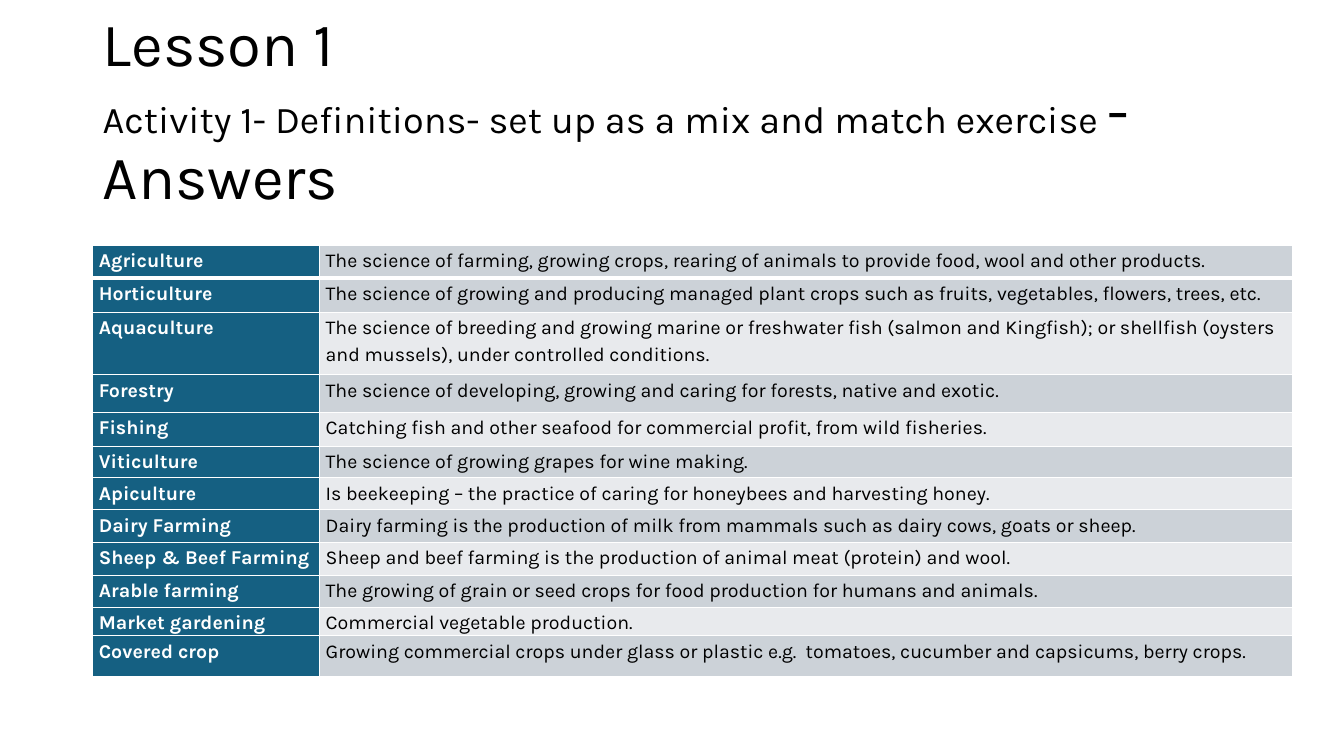
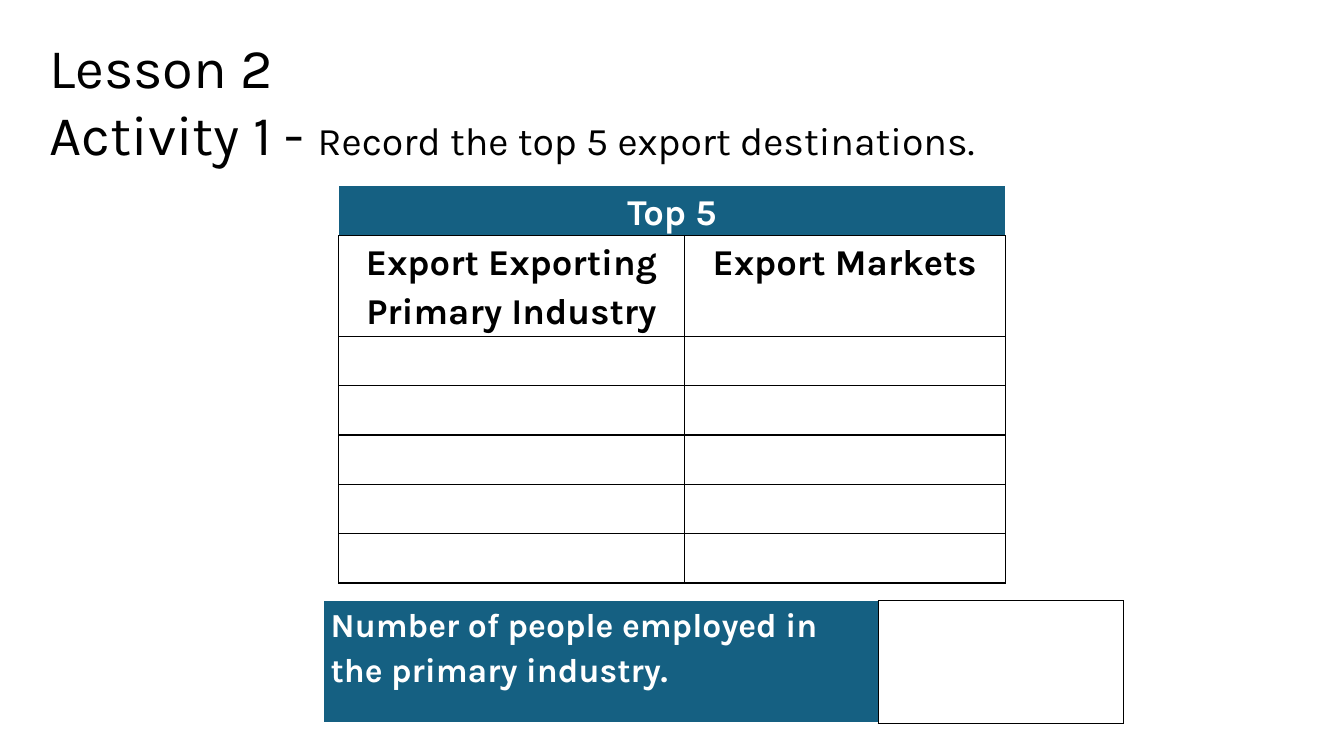
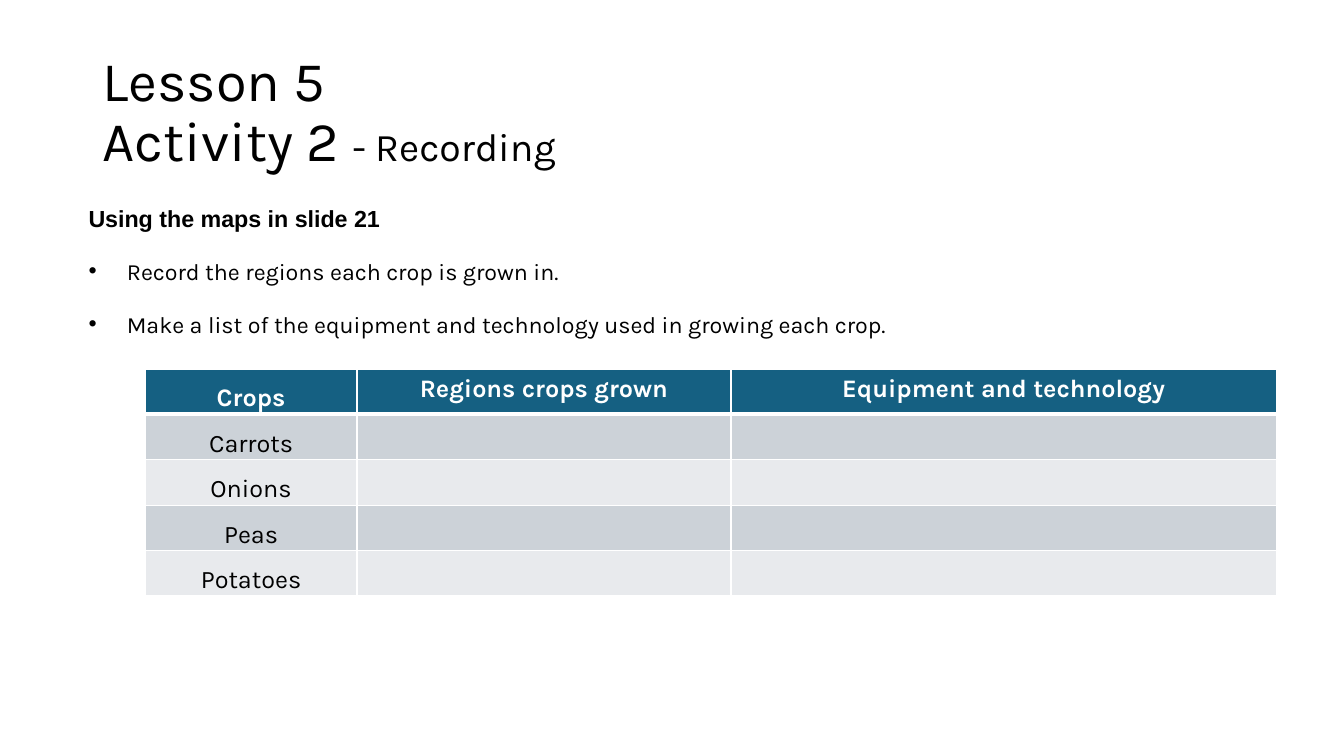
from dataclasses import dataclass, field
from typing import Optional

from lxml.etree import SubElement
from pptx import Presentation
from pptx.dml.color import RGBColor
from pptx.enum.text import MSO_ANCHOR as Anchor, PP_ALIGN as Align
from pptx.oxml.ns import qn
from pptx.util import Emu, Pt

PX = 9144  # 100 px to the inch
WIDE, HIGH = 1333, 750
FONT = "Karla"
HEX = {
    "black": "000000",
    "white": "FFFFFF",
    "teal": "156082",
    "dark": "CCD2D8",
    "light": "E8EAED",
}
TITLE = (92, 40, 1150, 145)

TERMS = [
    ("Agriculture", "The science of farming, growing crops, rearing of animals to provide food, wool and other products.", 33),
    ("Horticulture", "The science of growing and producing managed plant crops such as fruits, vegetables, flowers, trees, etc.", 34),
    ("Aquaculture", "The science of breeding and growing marine or freshwater fish (salmon and Kingfish); or shellfish (oysters and mussels), under controlled conditions.", 62),
    ("Forestry", "The science of developing, growing and caring for forests, native and exotic.", 37),
    ("Fishing", "Catching fish and other seafood for commercial profit, from wild fisheries.", 34),
    ("Viticulture", "The science of growing grapes for wine making.", 31),
    ("Apiculture", "Is beekeeping – the practice of caring for honeybees and harvesting honey.", 32),
    ("Dairy Farming", "Dairy farming is the production of milk from mammals such as dairy cows, goats or sheep.", 32),
    ("Sheep & Beef Farming", "Sheep and beef farming is the production of animal meat (protein) and wool.", 33),
    ("Arable farming", "The growing of grain or seed crops for food production for humans and animals.", 32),
    ("Market gardening", "Commercial vegetable production.", 27),
    ("Covered crop", "Growing commercial crops under glass or plastic e.g.  tomatoes, cucumber and capsicums, berry crops.", 41),
]
CROPS = ["Carrots", "Onions", "Peas", "Potatoes"]


@dataclass
class Cell:
    """One table cell; edges maps a side (L, R, T, B) to (colour, points)."""
    text: str = ""
    fill: str = "white"
    color: str = "black"
    bold: bool = False
    align: Align = Align.LEFT
    ls: float = 1.15
    sa: int = 8
    pad: Optional[tuple[int, int]] = None
    edges: dict[str, tuple[str, int]] = field(default_factory=dict)


def px(num: int) -> Emu:
    return Emu(num * PX)


def rgb(name: str) -> RGBColor:
    return RGBColor.from_string(HEX[name])


def write(frame, *runs: tuple[str, float], color: str = "black", font: str = FONT,
          bold: bool = False, align: Align = Align.LEFT, ls: float = 1.0,
          sb: int = 0, sa: int = 0, dent: int = 0) -> None:
    """Add a paragraph of (text, size) runs; a dent makes it a bullet."""
    para = frame.paragraphs[0]
    if para.runs:
        para = frame.add_paragraph()
    para.alignment, para.line_spacing = align, ls
    para.space_before, para.space_after = Pt(sb), Pt(sa)
    if dent:
        props = para._p.get_or_add_pPr()
        props.set("marL", str(px(dent)))
        props.set("indent", str(px(-dent)))
        SubElement(props, qn("a:buFont")).set("typeface", "Arial")
        SubElement(props, qn("a:buChar")).set("char", "•")
    for text, size in runs:
        for num, line in enumerate(text.split("\n")):
            if num:
                para.add_line_break()
            run = para.add_run()
            run.text = line
            run.font.name, run.font.size, run.font.bold = font, Pt(size), bold
            run.font.color.rgb = rgb(color)


def add_box(slide, area: tuple[int, int, int, int], anchor: Anchor = Anchor.TOP):
    frame = slide.shapes.add_textbox(*map(px, area)).text_frame
    frame.word_wrap = True
    frame.vertical_anchor = anchor
    return frame


def add_title(slide, *runs: tuple[str, float]) -> None:
    write(add_box(slide, TITLE, Anchor.MIDDLE), *runs, ls=0.9)


def set_edges(cell, edges: dict[str, tuple[str, int]]) -> None:
    props = cell._tc.get_or_add_tcPr()
    for spot, side in enumerate("LRTB"):
        color, width = edges[side]
        line = SubElement(props, qn(f"a:ln{side}"), w=str(Pt(width)))
        fill = SubElement(line, qn("a:solidFill"))
        SubElement(fill, qn("a:srgbClr"), val=HEX[color])
        props.insert(spot, line)


def add_grid(slide, left: int, top: int, cols: list[int], rows: list[int],
             cells: list[list[Cell]], size: int, line: str = "white"):
    shape = slide.shapes.add_table(len(rows), len(cols), px(left), px(top),
                                   px(sum(cols)), px(sum(rows)))
    table = shape.table
    table.first_row = table.horz_banding = False
    for col, wide in zip(table.columns, cols):
        col.width = px(wide)
    for row, high in zip(table.rows, rows):
        row.height = px(high)
    for r, row in enumerate(cells):
        for c, item in enumerate(row):
            cell = table.cell(r, c)
            cell.fill.solid()
            cell.fill.fore_color.rgb = rgb(item.fill)
            set_edges(cell, dict.fromkeys("LRTB", (line, 1)) | item.edges)
            if item.pad:
                side, above = item.pad
                cell.margin_left = cell.margin_right = px(side)
                cell.margin_top, cell.margin_bottom = px(above), 0
            if item.text:
                write(cell.text_frame, (item.text, size), color=item.color,
                      bold=item.bold, align=item.align, ls=item.ls, sa=item.sa)
    return table


def rule(row: int) -> dict[str, tuple[str, int]]:
    """Thick white line between the first row and the second."""
    return {0: {"B": ("white", 3)}, 1: {"T": ("white", 3)}}.get(row, {})


def band(row: int) -> str:
    return "dark" if row % 2 else "light"


def add_terms(slide) -> None:
    add_title(slide, ("Lesson 1\n", 44),
              ("Activity 1- Definitions- set up as a mix and match exercise ", 27),
              ("- Answers", 44))
    cells = [
        [Cell(term, "teal", "white", True, pad=(6, 1), edges=rule(r)),
         Cell(text, band(r) if r else "dark", pad=(6, 1), edges=rule(r))]
        for r, (term, text, _) in enumerate(TERMS)
    ]
    add_grid(slide, 92, 243, [225, 965], [high for *_, high in TERMS], cells, 14)


def add_exports(slide) -> None:
    white = dict.fromkeys("LTR", ("white", 1))
    style = {"bold": True, "align": Align.CENTER, "pad": (16, 0)}
    cells = [
        [Cell("Top 5", "teal", "white", edges=white, **style),
         Cell(fill="teal", edges=white)],
        [Cell(text, **style) for text in ("Export Exporting Primary Industry", "Export Markets")],
        *[[Cell(), Cell()] for _ in range(5)],
    ]
    table = add_grid(slide, 336, 184, [343, 318], [49, 97] + [49] * 5, cells, 26, "black")
    table.cell(0, 0).merge(table.cell(0, 1))

    edges = {"L": ("white", 1), "T": ("white", 1), "B": ("white", 3)}
    jobs = Cell("Number of people employed in the primary industry.", "teal", "white",
                True, pad=(7, 0), edges=edges)
    add_grid(slide, 321, 596, [550, 243], [122], [[jobs, Cell()]], 24, "black")
    write(add_box(slide, (39, 27, 1075, 145)), ("Lesson 2\nActivity 1 - ", 40),
          ("Record the top 5 export destinations.", 28))


def add_crops(slide) -> None:
    add_title(slide, ("Lesson 5 \nActivity 2 ", 40), ("- Recording", 28))
    body = add_box(slide, (78, 203, 1150, 153))
    write(body, ("Using the maps in slide 21", 16.6), font="Arial", bold=True, ls=0.8, sb=10)
    for text, gap in (("Record the regions each crop is grown in.", 0),
                      ("Make a list of the equipment and technology used in growing each crop.", 8)):
        write(body, (text, 16.6), ls=1.4, sb=10, sa=gap, dent=38)

    first = {"align": Align.CENTER, "ls": 1.5, "pad": (7, 0)}
    other = {"align": Align.CENTER, "ls": 1.0, "sa": 0}
    heads = [("Crops", first), ("Regions crops grown", other), ("Equipment and technology", other)]
    cells = [[Cell(text, "teal", "white", True, edges=rule(0), **style) for text, style in heads]]
    for r, crop in enumerate(CROPS, 1):
        blank = Cell(fill=band(r), edges=rule(r))
        cells.append([Cell(crop, band(r), edges=rule(r), **first), blank, blank])
    add_grid(slide, 144, 366, [210, 371, 541], [44] * len(cells), cells, 18)


def main() -> None:
    deck = Presentation()
    deck.slide_width, deck.slide_height = px(WIDE), px(HIGH)
    for build in (add_terms, add_exports, add_crops):
        build(deck.slides.add_slide(deck.slide_layouts[6]))
    deck.save("out.pptx")


if __name__ == "__main__":
    main()
